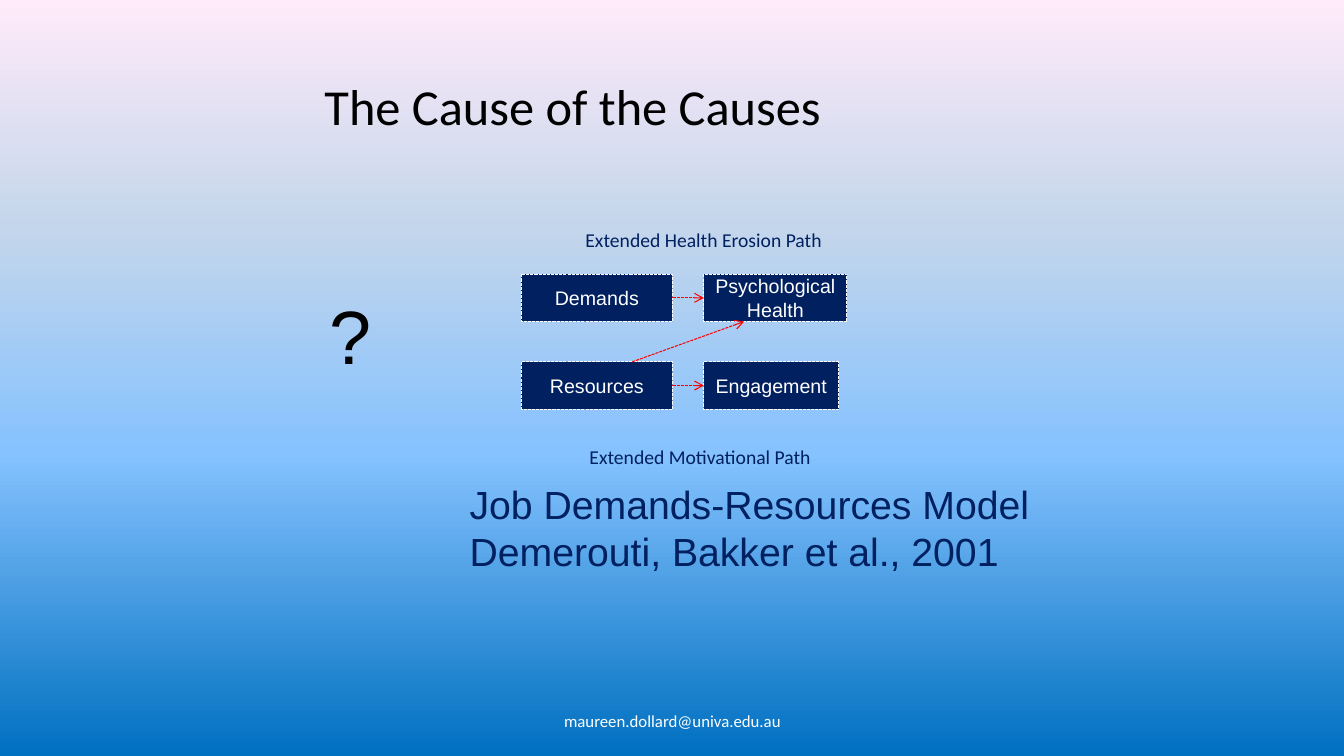
from dataclasses import dataclass

import pptx
import pptx.dml.color
import pptx.enum.dml
import pptx.enum.shapes
import pptx.enum.text
import pptx.oxml
import pptx.oxml.ns
import pptx.util
from lxml import etree

Inches = pptx.util.Inches
Align = pptx.enum.text.PP_ALIGN
Anchor = pptx.enum.text.MSO_ANCHOR
qn = pptx.oxml.ns.qn


@dataclass(frozen=True)
class Theme:
    """Colours, fonts and type sizes of the slide."""
    navy: str = "002060"
    white: str = "FFFFFF"
    black: str = "000000"
    arrow: str = "FF0000"
    sky: tuple = ((0, "0070C0"), (40, "85C2FF"), (70, "C4D6EB"), (100, "FFEBFA"))
    heading_font: str = "Calibri"
    body_font: str = "Arial"
    title_size: int = 36
    question_size: int = 54
    citation_size: int = 28
    label_size: int = 14
    footer_size: int = 12
    line_width: float = 0.75


THEME = Theme()


def rgb(code):
    """Return the colour for a hex code."""
    return pptx.dml.color.RGBColor.from_string(code)


def paint_background(slide):
    """Fill the slide with a gradient rising from the bottom edge."""
    fill = slide.background.fill
    fill.gradient()
    fill.gradient_angle = 90
    stops = slide.element.find(".//" + qn("a:gsLst"))
    for stop in list(stops):
        stops.remove(stop)
    for percent, code in THEME.sky:
        stop = etree.SubElement(stops, qn("a:gs"), pos=str(percent * 1000))
        etree.SubElement(stop, qn("a:srgbClr"), val=code)


def write(frame, lines, font, size, colour, align, anchor):
    """Write one paragraph per line into a text frame."""
    frame.vertical_anchor = anchor
    for index, line in enumerate(lines):
        paragraph = frame.paragraphs[0] if index == 0 else frame.add_paragraph()
        paragraph.alignment = align
        run = paragraph.add_run()
        run.text = line
        run.font.name = font
        run.font.size = pptx.util.Pt(size)
        run.font.color.rgb = rgb(colour)


def add_text(slide, box, lines, font, size, colour, align=Align.LEFT, anchor=Anchor.TOP):
    """Place a wrapping text box."""
    frame = slide.shapes.add_textbox(*map(Inches, box)).text_frame
    frame.word_wrap = True
    write(frame, lines, font, size, colour, align, anchor)


def style_line(line, colour):
    """Give an outline or arrow its thin dashes."""
    line.color.rgb = rgb(colour)
    line.width = pptx.util.Pt(THEME.line_width)
    line.dash_style = pptx.enum.dml.MSO_LINE.SQUARE_DOT


def add_factor(slide, box, lines):
    """Place one navy box of the model."""
    factor = slide.shapes.add_shape(pptx.enum.shapes.MSO_SHAPE.RECTANGLE, *map(Inches, box))
    factor.shadow.inherit = False
    factor.fill.solid()
    factor.fill.fore_color.rgb = rgb(THEME.navy)
    style_line(factor.line, THEME.white)
    factor.text_frame.word_wrap = False
    write(factor.text_frame, lines, THEME.body_font, THEME.label_size, THEME.white,
          Align.CENTER, Anchor.MIDDLE)
    return factor


def add_arrow(slide, start, end):
    """Draw a dashed arrow between two points."""
    arrow = slide.shapes.add_connector(
        pptx.enum.shapes.MSO_CONNECTOR.STRAIGHT, *map(Inches, start + end))
    style_line(arrow.line, THEME.arrow)
    etree.SubElement(arrow.line._get_or_add_ln(), qn("a:tailEnd"), type="arrow")
    etree.SubElement(arrow._element.spPr, qn("a:effectLst"))
    return arrow


def add_model(slide, box):
    """Draw the two paths of the model with their captions."""
    left, top, width, height = box
    factor_height, cause_width = 0.47, 1.5
    outcome_left = left + 1.81
    lower_top = top + height - factor_height
    rows = (
        (top, ["Demands"], ["Psychological", "Health"], width),
        (lower_top, ["Resources"], ["Engagement"], 1.34),
    )
    for row_top, cause_lines, outcome_lines, right in rows:
        outcome_width = right - 1.81 if right == width else right
        cause = add_factor(slide, (left, row_top, cause_width, factor_height), cause_lines)
        outcome = add_factor(
            slide, (outcome_left, row_top, outcome_width, factor_height), outcome_lines)
        middle = row_top + factor_height / 2
        path_arrow = add_arrow(slide, (left + cause_width, middle), (outcome_left, middle))
        path_arrow.begin_connect(cause, 3)
        path_arrow.end_connect(outcome, 1)
    add_arrow(slide, (left + 1.1, lower_top), (left + 2.21, top + factor_height))
    captions = (
        ("Extended Health Erosion Path", (left + 0.04, top - 0.54, 3.54, 0.39)),
        ("Extended Motivational Path", (left - 0.39, top + height + 0.32, 4.33, 0.31)),
    )
    for caption, caption_box in captions:
        add_text(slide, caption_box, [caption], THEME.heading_font, THEME.label_size,
                 THEME.navy, Align.CENTER, Anchor.MIDDLE)


def add_title(slide, box):
    """Place the slide title."""
    add_text(slide, box, ["The Cause of the Causes"], THEME.heading_font,
             THEME.title_size, THEME.black)


def add_question(slide, box):
    """Place the question mark for the unknown cause."""
    add_text(slide, box, ["?"], THEME.body_font, THEME.question_size, THEME.black)


def add_citation(slide, box):
    """Name the model and its authors."""
    add_text(slide, box, ["Job Demands-Resources Model", "Demerouti, Bakker et al., 2001"],
             THEME.body_font, THEME.citation_size, THEME.navy)


def add_footer(slide, box):
    """Place the contact address."""
    add_text(slide, box, ["maureen.dollard@univa.edu.au"], THEME.heading_font,
             THEME.footer_size, THEME.white, Align.CENTER, Anchor.MIDDLE)


def main():
    """Build and save the slide."""
    deck = pptx.Presentation()
    deck.slide_width, deck.slide_height = Inches(13.33), Inches(7.5)
    slide = deck.slides.add_slide(deck.slide_layouts[6])
    paint_background(slide)
    add_title(slide, (3.12, 0.7, 6.47, 0.71))
    add_question(slide, (3.17, 2.82, 1.13, 1.01))
    add_model(slide, (5.17, 2.72, 3.23, 1.34))
    add_citation(slide, (4.56, 4.72, 5.83, 1.04))
    add_footer(slide, (4.56, 6.95, 4.22, 0.4))
    deck.save("out.pptx")


if __name__ == "__main__":
    main()
